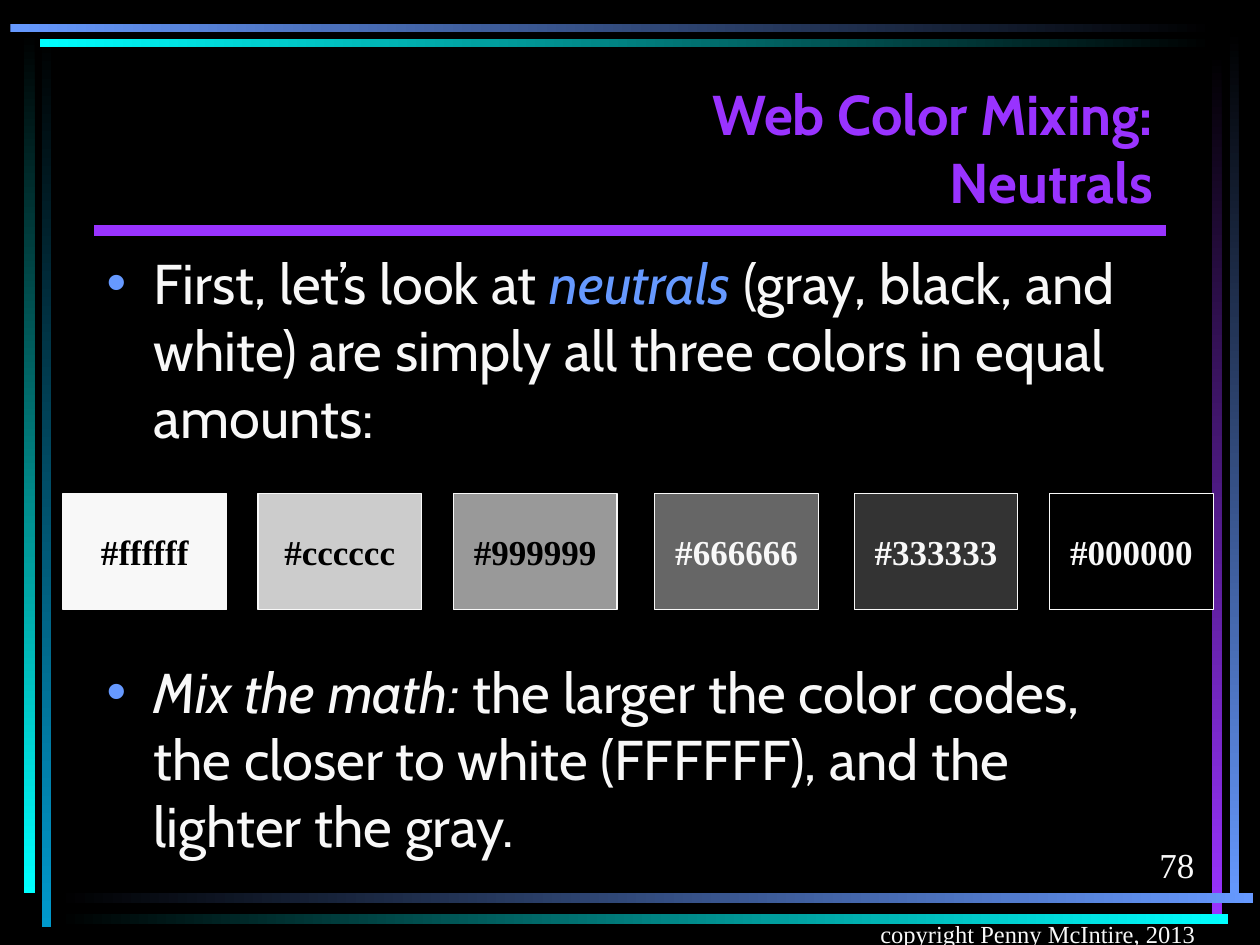
from lxml import etree
from pptx import Presentation
from pptx.dml.color import RGBColor
from pptx.enum import shapes, text
from pptx.oxml.ns import qn
from pptx.util import Cm, Pt

COLORS = {"black": "000000", "white": "F8F8F8", "blue": "6699FF",
          "purple": "9933FF", "cyan": "00FFFF", "teal": "0099CC"}
HEAD, SERIF = "Cabin", "Times New Roman"
ALIGN, ANCHOR = text.PP_ALIGN, text.MSO_ANCHOR


def rgb(name):
    return RGBColor.from_string(COLORS.get(name, name))


class Deck:
    def __init__(self):
        self.prs = Presentation()
        self.prs.slide_width, self.prs.slide_height = Cm(25.4), Cm(19.05)
        self.slide = self.prs.slides.add_slide(self.prs.slide_layouts[5])
        fill = self.slide.background.fill
        fill.solid()
        fill.fore_color.rgb = rgb("black")

    def style(self, para, font, size, color, bold=False, align=None):
        para.alignment = align
        para.font.name, para.font.size = font, Pt(size)
        para.font.bold, para.font.color.rgb = bold, rgb(color)

    def rect(self, box):
        shape = self.slide.shapes.add_shape(
            shapes.MSO_SHAPE.RECTANGLE, *map(Cm, box))
        shape.shadow.inherit = False
        return shape

    def bar(self, box, start, end):
        shape = self.rect(box)
        shape.line.fill.background()
        shape.fill.gradient()
        shape.fill.gradient_angle = 0 if box[2] > box[3] else 270
        for stop, color in zip(shape.fill.gradient_stops, (start, end)):
            stop.color.rgb = rgb(color)

    def rule(self, x, y, end, color, width):
        line = self.slide.shapes.add_connector(
            shapes.MSO_CONNECTOR.STRAIGHT, Cm(x), Cm(y), Cm(end), Cm(y))
        line.line.color.rgb, line.line.width = rgb(color), Pt(width)
        etree.SubElement(line._element.spPr, qn("a:effectLst"))

    def title(self, box, words):
        shape = self.slide.shapes.title
        shape.left, shape.top, shape.width, shape.height = map(Cm, box)
        frame = shape.text_frame
        frame.text = words
        frame.auto_size = text.MSO_AUTO_SIZE.NONE
        frame.vertical_anchor = ANCHOR.BOTTOM
        self.style(frame.paragraphs[0], HEAD, 32, "purple", True, ALIGN.RIGHT)

    def label(self, box):
        frame = self.slide.shapes.add_textbox(*map(Cm, box)).text_frame
        frame.word_wrap = True
        return frame

    def note(self, box, words, size):
        frame = self.label(box)
        frame.vertical_anchor = ANCHOR.BOTTOM
        frame.text = words
        self.style(frame.paragraphs[0], SERIF, size, "white", align=ALIGN.RIGHT)

    def bullet(self, box, parts):
        """Each part is (words, italic, colour or None)."""
        para = self.label(box).paragraphs[0]
        props = para._p.get_or_add_pPr()
        props.set("marL", str(Cm(0.95)))
        props.set("indent", str(-Cm(0.95)))
        tint = etree.SubElement(props, qn("a:buClr"))
        etree.SubElement(tint, qn("a:srgbClr"), val=COLORS["blue"])
        etree.SubElement(props, qn("a:buFont"), typeface="Arial")
        etree.SubElement(props, qn("a:buChar"), char="•")
        self.style(para, HEAD, 32, "white")
        for words, slant, color in parts:
            run = para.add_run()
            run.text = words
            if slant:
                run.font.italic = True
            if color:
                run.font.color.rgb = rgb(color)

    def swatch(self, box, code, fill, ink):
        shape = self.rect(box)
        shape.fill.solid()
        shape.fill.fore_color.rgb = rgb(fill)
        shape.line.color.rgb, shape.line.width = rgb("white"), Pt(0.75)
        frame = shape.text_frame
        frame.word_wrap = False
        frame.vertical_anchor = ANCHOR.MIDDLE
        frame.text = code
        self.style(frame.paragraphs[0], SERIF, 20, ink, True, ALIGN.CENTER)


def main():
    deck = Deck()

    # Frame of fading bars: left, right, bottom, top
    for box, start, end in (
            ((0.84, 0.71, 0.2, 17.98), "black", "teal"),
            ((0.48, 0.64, 0.22, 17.37), "black", "cyan"),
            ((24.79, 0.61, 0.18, 17.6), "black", "blue"),
            ((24.43, 1.07, 0.2, 17.35), "black", "purple"),
            ((1.14, 18, 24.13, 0.2), "black", "blue"),
            ((1.14, 18.42, 23.62, 0.2), "black", "cyan"),
            ((0.81, 0.79, 23.67, 0.16), "cyan", "black"),
            ((0.21, 0.48, 24.28, 0.17), "blue", "black")):
        deck.bar(box, start, end)

    # Title and rule
    deck.title((1.9, 1.27, 21.6, 3.18), "Web Color Mixing:\vNeutrals")
    deck.rule(1.9, 4.65, 23.5, "purple", 6)

    # Bullets
    deck.bullet((1.9, 4.88, 21.6, 4.45), (
        ("First, let’s look at ", False, None),
        ("neutrals", True, "blue"),
        (" (gray, black, and white) are simply all three colors in equal "
         "amounts:", False, None)))
    deck.bullet((1.9, 13.13, 21.6, 4.65), (
        ("Mix the math:", True, None),
        (" the larger the color codes, the closer to white (FFFFFF), and the "
         "lighter the gray.", False, None)))

    # Gray swatches, light to dark
    lefts = (1.27, 5.2, 9.14, 13.2, 17.22, 21.16)
    for i, (x, digit) in enumerate(zip(lefts, "fc9630")):
        fill = "white" if digit == "f" else digit.upper() * 6
        deck.swatch((x, 9.95, 3.3, 2.34), "#" + digit * 6, fill,
                    "black" if i < 3 else "white")

    # Page number and footer
    deck.note((19.05, 16.71, 5.28, 1.27), "78", 20)
    deck.note((16.3, 17.98, 8.05, 1.27), "copyright Penny McIntire, 2013", 14)

    deck.prs.save("out.pptx")


if __name__ == "__main__":
    main()
